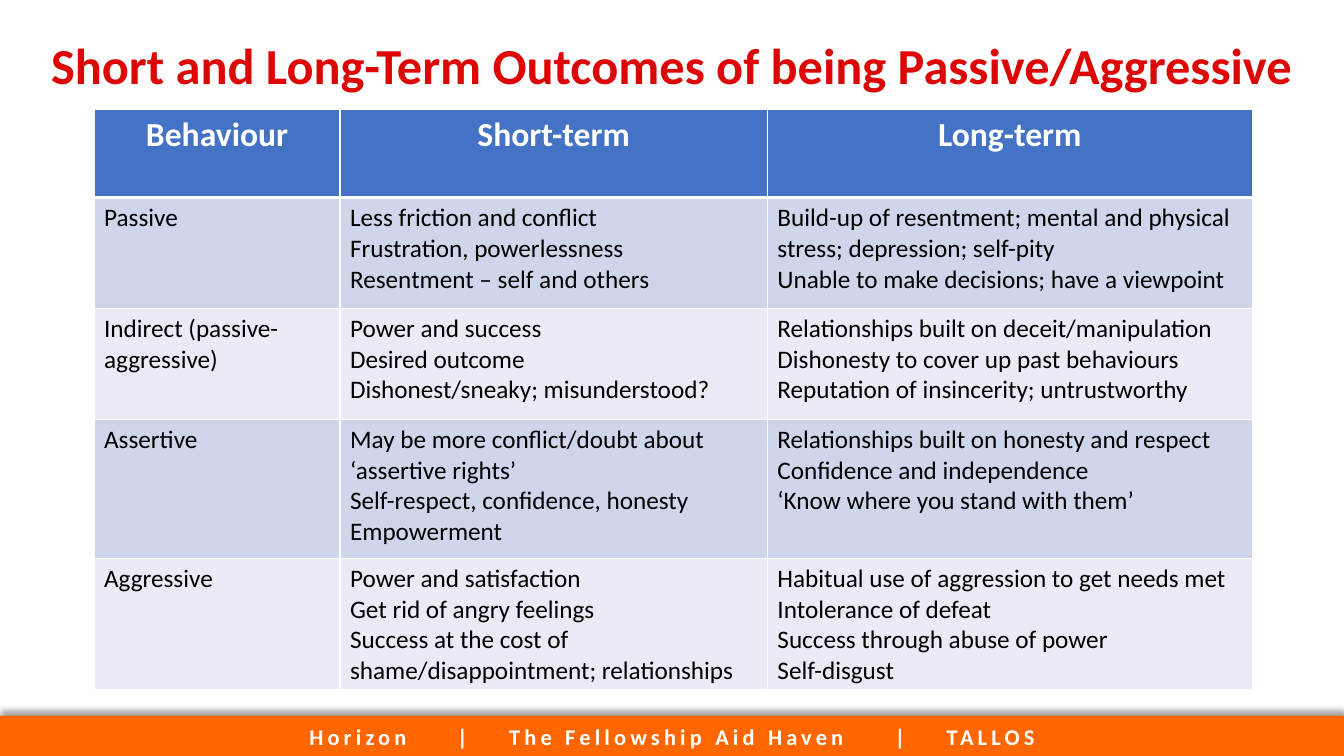
from dataclasses import dataclass

from lxml import etree
from pptx import Presentation, util as u
from pptx.dml.color import RGBColor
from pptx.enum import shapes, text
from pptx.oxml import ns

WHITE, BLACK, RED, ORANGE = "FFFFFF", "000000", "DC0705", "FF6600"
HEADER_FILL, BAND_FILLS = "4472C4", ("CFD5EA", "E9EBF5")
SLIDE_W, SLIDE_H = u.Inches(13.33), u.Inches(7.5)
COLUMN_SHARES = (18.3, 31.8, 36.08)
ROW_SHARES = (11.6, 14.67, 14.67, 18.4, 14.67)


@dataclass(frozen=True)
class Style:
    size: float
    color: str
    bold: bool = False
    align: text.PP_ALIGN = text.PP_ALIGN.LEFT


@dataclass(frozen=True)
class Outcome:
    behaviour: str
    short_term: tuple[str, ...]
    long_term: tuple[str, ...]


CENTER = text.PP_ALIGN.CENTER
TITLE = Style(36, RED, True, CENTER)
HEADER = Style(24, WHITE, True, CENTER)
BODY = Style(18, BLACK)
FOOTER = Style(16, WHITE, True, CENTER)

OUTCOMES = (
    Outcome("Passive",
            ("Less friction and conflict", "Frustration, powerlessness",
             "Resentment – self and others"),
            ("Build-up of resentment; mental and physical stress; depression; self-pity",
             "Unable to make decisions; have a viewpoint")),
    Outcome("Indirect (passive-aggressive)",
            ("Power and success", "Desired outcome",
             "Dishonest/sneaky; misunderstood?"),
            ("Relationships built on deceit/manipulation",
             "Dishonesty to cover up past behaviours",
             "Reputation of insincerity; untrustworthy")),
    Outcome("Assertive",
            ("May be more conflict/doubt about ‘assertive rights’",
             "Self-respect, confidence, honesty", "Empowerment"),
            ("Relationships built on honesty and respect",
             "Confidence and independence",
             "‘Know where you stand with them’")),
    Outcome("Aggressive",
            ("Power and satisfaction", "Get rid of angry feelings",
             "Success at the cost of shame/disappointment; relationships"),
            ("Habitual use of aggression to get needs met",
             "Intolerance of defeat", "Success through abuse of power",
             "Self-disgust")),
)
FOOTER_NAMES = ("Horizon", "The Fellowship Aid Haven", "TALLOS")


def rgb(color: str) -> RGBColor:
    return RGBColor.from_string(color)


def across(percent: float) -> int:
    return round(SLIDE_W * percent / 100)


def down(percent: float) -> int:
    return round(SLIDE_H * percent / 100)


def add_run(p, words: str, style: Style, tracking: float = 0) -> None:
    """Add a run; tracking is the extra space after each letter, in points."""
    r = p.add_run()
    r.text = words
    formats = {"name": "Calibri", "size": u.Pt(style.size), "bold": style.bold}
    for name, value in formats.items():
        setattr(r.font, name, value)
    r.font.color.rgb = rgb(style.color)
    if tracking:
        r.font._element.set("spc", str(round(tracking * 100)))


def write(tf, lines: tuple[str, ...], style: Style) -> None:
    for i, line in enumerate(lines):
        p = tf.add_paragraph() if i else tf.paragraphs[0]
        p.alignment = style.align
        add_run(p, line, style)


def set_borders(cell, top: float, bottom: float) -> None:
    tc_pr = cell._tc.get_or_add_tcPr()
    for side, width in {"L": 1, "R": 1, "T": top, "B": bottom}.items():
        ln = etree.SubElement(tc_pr, ns.qn(f"a:ln{side}"), w=str(u.Pt(width)))
        fill = etree.SubElement(ln, ns.qn("a:solidFill"))
        etree.SubElement(fill, ns.qn("a:srgbClr"), val=WHITE)


def add_title(slide) -> None:
    sp = slide.shapes.add_textbox(0, 0, SLIDE_W, down(18))
    tf = sp.text_frame
    tf.word_wrap = True
    tf.vertical_anchor = text.MSO_ANCHOR.MIDDLE
    write(tf, ("Short and Long-Term Outcomes of being Passive/Aggressive",), TITLE)
    tf.paragraphs[0].line_spacing = 0.9


def add_outcomes(slide) -> None:
    rows = [(("Behaviour",), ("Short-term",), ("Long-term",))]
    rows += [((o.behaviour,), o.short_term, o.long_term) for o in OUTCOMES]
    table = slide.shapes.add_table(
        len(rows), len(COLUMN_SHARES), across(7), down(14.53),
        across(sum(COLUMN_SHARES)), down(sum(ROW_SHARES))).table
    for column, share in zip(table.columns, COLUMN_SHARES):
        column.width = across(share)
    for i, (row, share) in enumerate(zip(rows, ROW_SHARES)):
        table.rows[i].height = down(share)
        for j, lines in enumerate(row):
            cell = table.cell(i, j)
            set_borders(cell, 3 if i == 1 else 1, 3 if i == 0 else 1)
            cell.fill.solid()
            cell.fill.fore_color.rgb = rgb(BAND_FILLS[(i - 1) % 2] if i else HEADER_FILL)
            write(cell.text_frame, lines, BODY if i else HEADER)


def add_shadow(sp, color: str, blur: float, distance: float, angle: int) -> None:
    sp.shadow.inherit = False
    effects = sp._element.spPr.find(ns.qn("a:effectLst"))
    shadow = etree.SubElement(
        effects, ns.qn("a:outerShdw"), blurRad=str(u.Pt(blur)),
        dist=str(u.Pt(distance)), dir=str(angle * 60000), rotWithShape="0")
    etree.SubElement(shadow, ns.qn("a:srgbClr"), val=color)


def add_footer(slide) -> None:
    sp = slide.shapes.add_shape(shapes.MSO_SHAPE.RECTANGLE, 0, down(94.67),
                                SLIDE_W, down(5.47))
    sp.fill.solid()
    sp.fill.fore_color.rgb = rgb(ORANGE)
    sp.line.fill.background()
    add_shadow(sp, "A6A6A6", 4, 4, 280)
    tf = sp.text_frame
    tf.word_wrap = True
    tf.vertical_anchor = text.MSO_ANCHOR.MIDDLE
    p = tf.paragraphs[0]
    p.alignment = FOOTER.align
    for i, name in enumerate(FOOTER_NAMES):
        if i:
            for words, tracking in ((" ", 29.5), ("|", 3), (" ", 23)):
                add_run(p, words, FOOTER, tracking)
        add_run(p, name, FOOTER, 3)


def main() -> None:
    prs = Presentation()
    prs.slide_width, prs.slide_height = SLIDE_W, SLIDE_H
    slide = prs.slides.add_slide(prs.slide_layouts[6])
    add_title(slide)
    add_outcomes(slide)
    add_footer(slide)
    prs.save("out.pptx")


if __name__ == "__main__":
    main()
